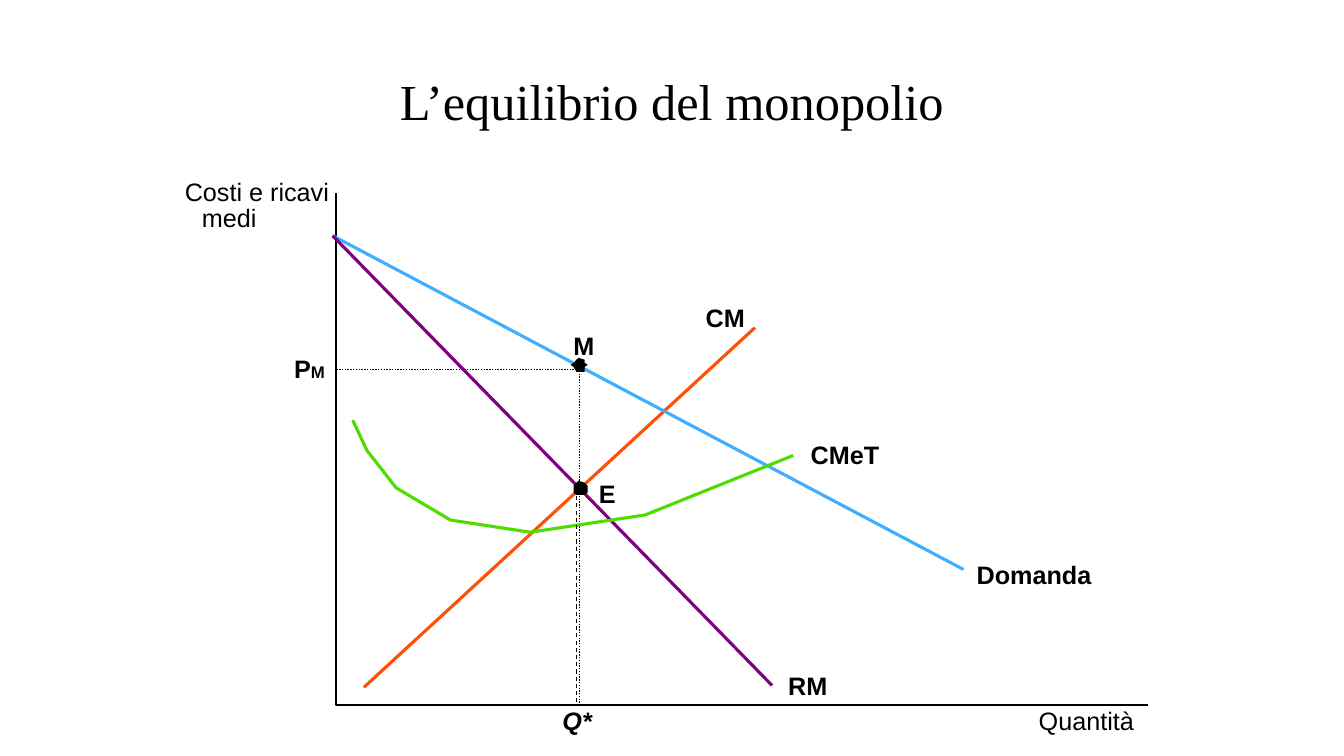
import pptx
import pptx.dml.color
import pptx.enum.dml
import pptx.enum.shapes
import pptx.enum.text
import pptx.util
from pptx.oxml.ns import qn
from lxml import etree

Pt = pptx.util.Pt
Align = pptx.enum.text.PP_ALIGN
Anchor = pptx.enum.text.MSO_ANCHOR
AutoSize = pptx.enum.text.MSO_AUTO_SIZE
Dash = pptx.enum.dml.MSO_LINE

BLACK = "000000"
COST_ORANGE = "FF5008"
DEMAND_BLUE = "40AEFF"
REVENUE_PURPLE = "800080"
AVERAGE_GREEN = "51DC00"


def color(hex_string):
    return pptx.dml.color.RGBColor.from_string(hex_string)


def add_text(slide, box, text, size=18, font="Arial", bold=False, italic=False,
             align=Align.LEFT, anchor=Anchor.TOP, margins=(0, 0), wrap=False,
             small_suffix=""):
    """Add one line of text; small_suffix follows it in 12 points."""
    shape = slide.shapes.add_textbox(*(Pt(length) for length in box))
    frame = shape.text_frame
    frame.word_wrap = wrap
    frame.auto_size = AutoSize.NONE if wrap else AutoSize.SHAPE_TO_FIT_TEXT
    frame.vertical_anchor = anchor
    frame.margin_left = frame.margin_right = Pt(margins[0])
    frame.margin_top = frame.margin_bottom = Pt(margins[1])
    paragraph = frame.paragraphs[0]
    paragraph.alignment = align
    for part, part_size in ((text, size), (small_suffix, 12)):
        if part:
            run = paragraph.add_run()
            run.text = part
            run.font.name = font
            run.font.size = Pt(part_size)
            run.font.bold = bold
            run.font.italic = italic
            run.font.color.rgb = color(BLACK)


def style_line(line, hex_string, width, dash=None):
    line.color.rgb = color(hex_string)
    line.width = Pt(width)
    if dash:
        line.dash_style = dash


def add_line(slide, start, end, hex_string, width, dash=None):
    connector = slide.shapes.add_connector(
        pptx.enum.shapes.MSO_CONNECTOR.STRAIGHT,
        *(Pt(length) for length in (*start, *end)))
    style_line(connector.line, hex_string, width, dash)
    etree.SubElement(connector._element.spPr, qn("a:effectLst"))


def add_outline(slide, points, closed=False):
    (start_x, start_y), *others = [(Pt(x), Pt(y)) for x, y in points]
    builder = slide.shapes.build_freeform(start_x, start_y)
    builder.add_line_segments(others, close=closed)
    shape = builder.convert_to_shape()
    shape.shadow.inherit = False
    return shape


def add_path(slide, points, hex_string, width, dash=None):
    shape = add_outline(slide, points)
    shape.fill.background()
    style_line(shape.line, hex_string, width, dash)


def add_marker(slide, points):
    shape = add_outline(slide, points, closed=True)
    shape.fill.solid()
    shape.fill.fore_color.rgb = color(BLACK)
    shape.line.fill.background()


def add_title(slide, left, top, width, height):
    add_text(slide, (left, top, width, height), "L’equilibrio del monopolio",
             size=36, font="Times New Roman", align=Align.CENTER,
             anchor=Anchor.MIDDLE, margins=(7.2, 3.6), wrap=True)


def add_monopoly_graph(slide, left, top, width, height):
    """Draw the axes, curves and labels; the box is the area between the axes."""
    def place(*points):
        return [(left + x, top + y) for x, y in points]

    def add_label(x, y, label_width, text, **text_format):
        add_text(slide, (left + x, top + y, label_width, 21.6), text, **text_format)

    add_path(slide, place((0, 0), (0, height), (width, height)), BLACK, 1)

    add_label(-108, -12, 103.7, "Costi e ricavi")
    add_label(-95.8, 6.4, 39.6, "medi")
    add_label(width - 78.6, height + 0.5, 68.4, "Quantità", align=Align.RIGHT)
    add_label(161.8, height + 0.5, 22, "Q*", bold=True, italic=True)
    add_label(-29.9, 114.4, 22.3, "P", bold=True, small_suffix="M")
    for x, y, label_width, text in (
            (457.6, 261.6, 82.8, "Domanda"), (339, 175.9, 49.7, "CMeT"),
            (323, 340.8, 28.1, "RM"), (264, 78, 28.1, "CM"),
            (169.6, 98.2, 15.1, "M"), (187.9, 204, 12.2, "E")):
        add_label(x, y, label_width, text, bold=True)

    add_path(slide, place((174, height + 0.5), (174, 126), (0, 126)),
             BLACK, 1, Dash.ROUND_DOT)
    intercept = (-2.4, 30.4)
    for start, end, hex_string in (
            ((299.3, 96), (19.9, 353), COST_ORANGE),
            (intercept, (448.3, 268.8), DEMAND_BLUE),
            (intercept, (311.5, 351.6), REVENUE_PURPLE)):
        add_line(slide, *place(start, end), hex_string, 2.25)

    add_marker(slide, place(
        (173.3, 127.7), (177.6, 127.7), (177.6, 124.1), (179.8, 122.6),
        (177.6, 121.2), (177.6, 119), (173.3, 117.6), (171.8, 119),
        (169.7, 121.2), (167.5, 122.6), (169.7, 124.1), (171.8, 127.7)))
    add_marker(slide, place(
        (173.3, 215.5), (177.6, 215.5), (179.8, 214.1), (179.8, 209),
        (177.6, 206.9), (173.3, 205.4), (171.8, 206.9), (169.7, 209),
        (169.7, 214.1), (171.8, 215.5)))
    add_path(slide, place(
        (12, 162.2), (22.1, 183.8), (43, 210.5), (81.8, 233.5),
        (138.7, 242.2), (220.8, 229.9), (326.6, 187.4)), AVERAGE_GREEN, 2.25)
    add_line(slide, *place((171.9, 211.2), (171.9, height - 0.9)),
             BLACK, 0.75, Dash.DASH)


def main():
    presentation = pptx.Presentation()
    presentation.slide_width = Pt(960)
    presentation.slide_height = Pt(540)
    slide = presentation.slides.add_slide(presentation.slide_layouts[6])
    add_monopoly_graph(slide, 240, 138, 580.2, 365.5)
    add_title(slide, 120, 42, 720, 60)
    presentation.save("out.pptx")


if __name__ == "__main__":
    main()
